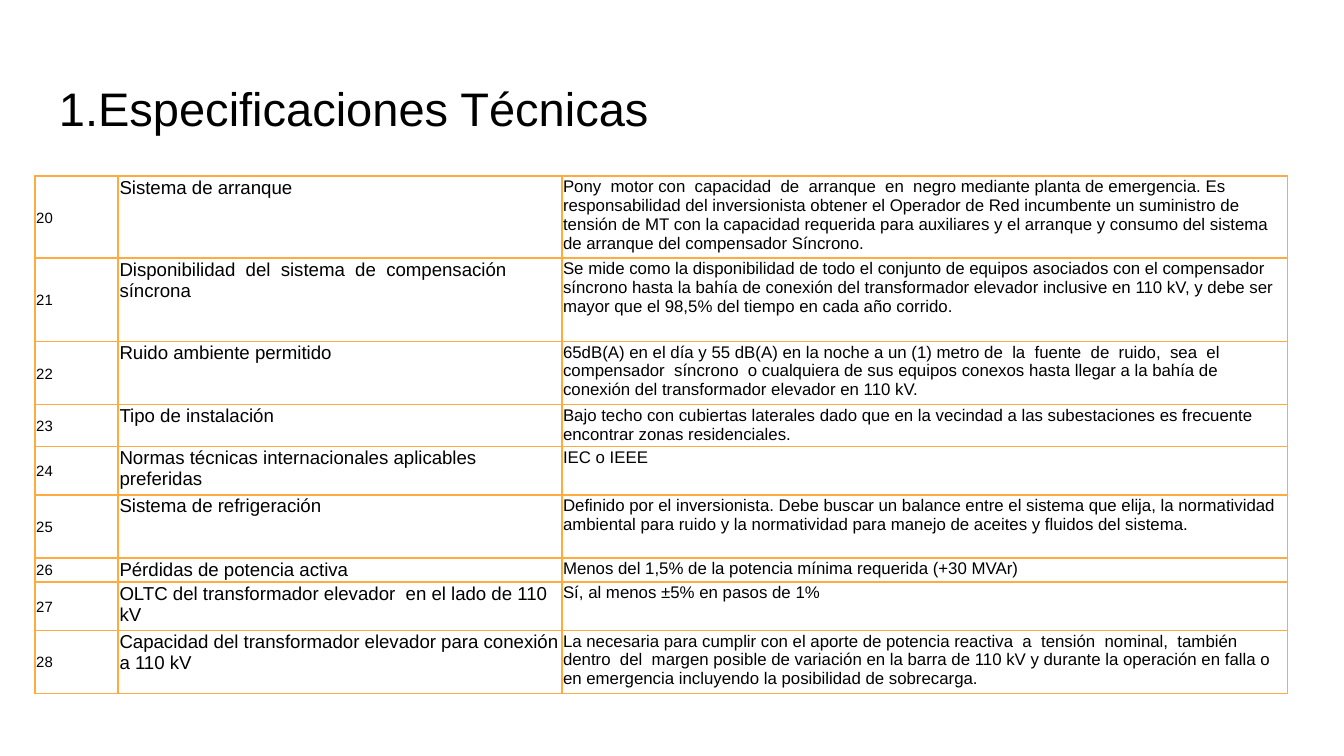
from lxml import etree
from pptx import Presentation
from pptx.dml.color import RGBColor
from pptx.enum.text import MSO_ANCHOR
from pptx.oxml.ns import qn
from pptx.util import Inches, Pt

TOP, MIDDLE = MSO_ANCHOR.TOP, MSO_ANCHOR.MIDDLE
WIDE = 10
HIGH = WIDE * 9 / 16
FONT, INK, EDGE = "Arial", "000000", "FFAB40"

TITLE = "1.Especificaciones Técnicas"
FIRST = 20
ROWS = [
    (0.47, "Sistema de arranque",
     "Pony  motor con  capacidad  de  arranque  en  negro mediante planta de emergencia. "
     "Es responsabilidad del inversionista obtener el Operador de Red incumbente un "
     "suministro de tensión de MT con la capacidad requerida para auxiliares y el arranque "
     "y consumo del sistema de arranque del compensador Síncrono."),
    (0.62, "Disponibilidad  del  sistema  de  compensación síncrona",
     "Se mide como la disponibilidad de todo el conjunto de equipos asociados con el "
     "compensador síncrono hasta la bahía de conexión del transformador elevador inclusive "
     "en 110 kV, y debe ser mayor que el 98,5% del tiempo en cada año corrido."),
    (0.47, "Ruido ambiente permitido",
     "65dB(A) en el día y 55 dB(A) en la noche a un (1) metro de  la  fuente  de  ruido,  "
     "sea  el  compensador  síncrono  o cualquiera de sus equipos conexos hasta llegar a "
     "la bahía de conexión del transformador elevador en 110 kV."),
    (0.31, "Tipo de instalación",
     "Bajo techo con cubiertas laterales dado que en la vecindad a las subestaciones es "
     "frecuente encontrar zonas residenciales."),
    (0.36, "Normas técnicas internacionales aplicables preferidas", "IEC o IEEE"),
    (0.47, "Sistema de refrigeración",
     "Definido por el inversionista. Debe buscar un balance entre el sistema que elija, la "
     "normatividad ambiental para ruido y la normatividad para manejo de aceites y fluidos "
     "del sistema."),
    (0.18, "Pérdidas de potencia activa",
     "Menos del 1,5% de la potencia mínima requerida (+30 MVAr)"),
    (0.36, "OLTC del transformador elevador  en el lado de 110 kV",
     "Sí, al menos ±5% en pasos de 1%"),
    (0.47, "Capacidad del transformador elevador para conexión a 110 kV",
     "La necesaria para cumplir con el aporte de potencia reactiva  a  tensión  nominal,  "
     "también  dentro  del  margen posible de variación en la barra de 110 kV y durante la "
     "operación en falla o en emergencia incluyendo la posibilidad de sobrecarga."),
]
COLS = [(0.62, 8, MIDDLE), (3.3, 10, TOP), (5.4, 9, TOP)]


def color(code):
    """Turn a hex string into a colour."""
    return RGBColor.from_string(code)


def write(frame, text, size):
    """Add one styled run to the first paragraph."""
    run = frame.paragraphs[0].add_run()
    run.text = text
    run.font.name, run.font.size = FONT, Pt(size)
    run.font.color.rgb = color(INK)


def border(cell):
    """Draw a thin line on the four sides of a cell."""
    props = cell._tc.get_or_add_tcPr()
    for side in ("lnL", "lnR", "lnT", "lnB"):
        line = etree.SubElement(props, qn("a:" + side), w=str(Pt(1)))
        fill = etree.SubElement(line, qn("a:solidFill"))
        etree.SubElement(fill, qn("a:srgbClr"), val=EDGE)


def add_title(slide):
    """Place the heading above the table."""
    left = 0.34
    box = slide.shapes.add_textbox(
        Inches(left), Inches(0.49), Inches(WIDE - 2 * left), Inches(0.63))
    frame = box.text_frame
    frame.word_wrap = True
    frame.vertical_anchor = MIDDLE
    frame.margin_left = frame.margin_right = Inches(0.1)
    frame.margin_top = frame.margin_bottom = Inches(0.1)
    write(frame, TITLE, 25.2)


def add_specs(slide):
    """Build the numbered table of specifications."""
    width = sum(col[0] for col in COLS)
    height = sum(row[0] for row in ROWS)
    table = slide.shapes.add_table(
        len(ROWS), len(COLS), Inches(0.26), Inches(1.31),
        Inches(width), Inches(height)).table
    table.first_row = table.horz_banding = False
    for c, col in enumerate(COLS):
        table.columns[c].width = Inches(col[0])
    for r, (tall, name, value) in enumerate(ROWS):
        table.rows[r].height = Inches(tall)
        texts = (str(FIRST + r), name, value)
        for c, (text, (_, size, anchor)) in enumerate(zip(texts, COLS)):
            cell = table.cell(r, c)
            cell.margin_left = cell.margin_right = cell.margin_top = Inches(0.01)
            cell.margin_bottom = 0
            cell.vertical_anchor = anchor
            border(cell)
            cell.fill.background()
            write(cell.text_frame, text, size)


def main():
    """Build the slide and save it."""
    deck = Presentation()
    deck.slide_width, deck.slide_height = Inches(WIDE), Inches(HIGH)
    slide = deck.slides.add_slide(deck.slide_layouts[6])
    add_title(slide)
    add_specs(slide)
    deck.save("out.pptx")


if __name__ == "__main__":
    main()
